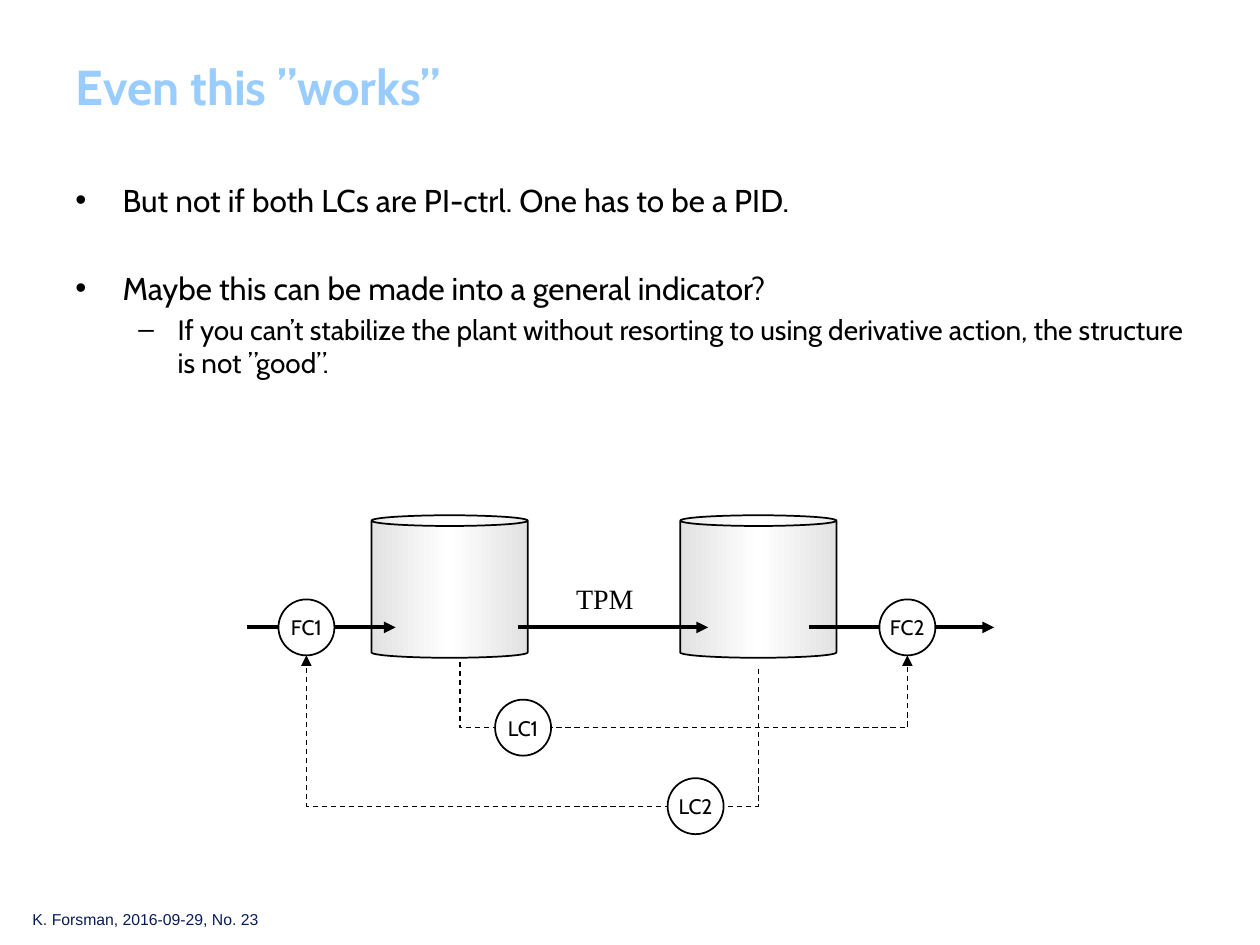
from copy import deepcopy

from lxml import etree
from pptx import Presentation
from pptx.dml.color import RGBColor
from pptx.enum import dml, shapes, text
from pptx.oxml import ns
from pptx.util import Pt

COLORS = {"title": "99CCFF", "ink": "000000", "paper": "FFFFFF",
          "steel": "E2E2E2", "footer": "081D58"}
FONT = "Cabin"


def rgb(name):
    return RGBColor.from_string(COLORS[name])


def style(paragraph, size, color="ink", font=FONT, bold=False):
    for run in paragraph.runs:
        run.font.size = Pt(size)
        run.font.name = font
        run.font.bold = bold
        run.font.color.rgb = rgb(color)


def add_text(slide, box, wording, size, wrap=True, anchor=text.MSO_ANCHOR.TOP,
             align=text.PP_ALIGN.LEFT, **look):
    frame = slide.shapes.add_textbox(*map(Pt, box)).text_frame
    frame.word_wrap = wrap
    frame.vertical_anchor = anchor
    frame.text = wording
    frame.paragraphs[0].alignment = align
    style(frame.paragraphs[0], size, **look)


def set_bullet(paragraph, mark, margin, indent):
    props = paragraph._p.get_or_add_pPr()
    props.set("marL", str(Pt(margin)))
    props.set("indent", str(Pt(-indent)))
    font = etree.SubElement(props, ns.qn("a:buFont"))
    font.set("typeface", "Arial")
    etree.SubElement(props, ns.qn("a:buChar")).set("char", mark)


def add_bullets(slide, box):
    points = [
        ("But not if both LCs are PI-ctrl. One has to be a PID.", 0, 0),
        ("Maybe this can be made into a general indicator?", 0, 28.4),
        ("If you can’t stabilize the plant without resorting to using derivative action, "
         "the structure is not ”good”.", 1, 3.2),
    ]
    levels = [("•", 27, 27, 18), ("–", 58.5, 22.5, 16)]
    frame = slide.shapes.add_textbox(*map(Pt, box)).text_frame
    frame.word_wrap = True
    for i, (wording, level, gap) in enumerate(points):
        paragraph = frame.paragraphs[0] if i == 0 else frame.add_paragraph()
        mark, margin, indent, size = levels[level]
        paragraph.text = wording
        paragraph.level = level
        set_bullet(paragraph, mark, margin, indent)
        paragraph.space_before = Pt(gap)
        style(paragraph, size)


def outline(shape, width):
    shape.line.color.rgb = rgb("ink")
    shape.line.width = Pt(width)


def add_arrowhead(shape):
    tail = etree.SubElement(shape.line._get_or_add_ln(), ns.qn("a:tailEnd"))
    tail.set("type", "triangle")


def add_tank(slide, x, y, width, height):
    tank = slide.shapes.add_shape(shapes.MSO_SHAPE.CAN, *map(Pt, (x, y, width, height)))
    tank.adjustments[0] = 0.075
    tank.shadow.inherit = False
    tank.fill.gradient()
    tank.fill.gradient_angle = 0
    stops = tank.fill.gradient_stops
    for stop, color in zip(stops, ("steel", "paper")):
        stop.color.rgb = rgb(color)
    stops[0].position, stops[1].position = 0, 0.5
    stop_list = tank._element.spPr.find(".//" + ns.qn("a:gsLst"))
    edge = deepcopy(stop_list[0])
    edge.set("pos", "100000")
    stop_list.append(edge)
    outline(tank, 1)


def add_pipe(slide, start, end, y):
    pipe = slide.shapes.add_connector(shapes.MSO_CONNECTOR.STRAIGHT,
                                      *map(Pt, (start, y, end, y)))
    etree.SubElement(pipe._element.spPr, ns.qn("a:effectLst"))
    outline(pipe, 2.25)
    add_arrowhead(pipe)


def add_signal(slide, points):
    first, *rest = [(Pt(x), Pt(y)) for x, y in points]
    builder = slide.shapes.build_freeform(*first)
    builder.add_line_segments(rest, close=False)
    signal = builder.convert_to_shape()
    signal.shadow.inherit = False
    signal.fill.background()
    outline(signal, 0.75)
    signal.line.dash_style = dml.MSO_LINE.DASH
    add_arrowhead(signal)


def add_controller(slide, label, x, y, size=32):
    """Draw a labelled circle centred on x, y."""
    circle = slide.shapes.add_shape(
        shapes.MSO_SHAPE.OVAL, *map(Pt, (x - size / 2, y - size / 2, size, size)))
    circle.shadow.inherit = False
    circle.fill.solid()
    circle.fill.fore_color.rgb = rgb("paper")
    outline(circle, 1)
    frame = circle.text_frame
    frame.word_wrap = False
    frame.vertical_anchor = text.MSO_ANCHOR.MIDDLE
    frame.text = label
    frame.paragraphs[0].alignment = text.PP_ALIGN.CENTER
    style(frame.paragraphs[0], 12)


def add_process(slide, left, top):
    pipe_y = top + 64
    flow_in, flow_out = left + 34, left + 377.4
    loops = [  # label, controller x, loop y, measured x, measured y, flow x
        ("LC1", left + 157.8, top + 121.3, left + 121.8, top + 83.5, flow_out),
        ("LC2", left + 256.4, top + 166.2, left + 292.2, top + 87.8, flow_in),
    ]
    for x in (71.2, 247.6):
        add_tank(slide, left + x, top, 89.3, 81.4)
    for start, end in ((0, 85), (154.8, 263.5), (321.2, 427)):
        add_pipe(slide, left + start, left + end, pipe_y)
    add_text(slide, (left + 180.8, top + 34.5, 47.5, 26.6), "TPM", 16, wrap=False,
             align=text.PP_ALIGN.CENTER, font="Times New Roman")
    for label, x, loop_y, level_x, level_y, flow_x in loops:
        add_signal(slide, [(level_x, level_y), (level_x, loop_y),
                           (flow_x, loop_y), (flow_x, pipe_y + 16)])
        add_controller(slide, label, x, loop_y)
    add_controller(slide, "FC2", flow_out, pipe_y)
    add_controller(slide, "FC1", flow_in, pipe_y)


def main():
    deck = Presentation()
    deck.slide_width, deck.slide_height = Pt(720), Pt(540)
    slide = deck.slides.add_slide(deck.slide_layouts[6])
    add_text(slide, (11.5, 516.2, 146.2, 18), "K. Forsman, 2016-09-29, No. 23", 9,
             wrap=False, color="footer", font="Arial")
    add_process(slide, 141.1, 294.5)
    add_text(slide, (36, 21.6, 641.5, 55.4), "Even this ”works”", 28,
             anchor=text.MSO_ANCHOR.MIDDLE, color="title", bold=True)
    add_bullets(slide, (36, 100, 648, 136))
    deck.save("out.pptx")


if __name__ == "__main__":
    main()
